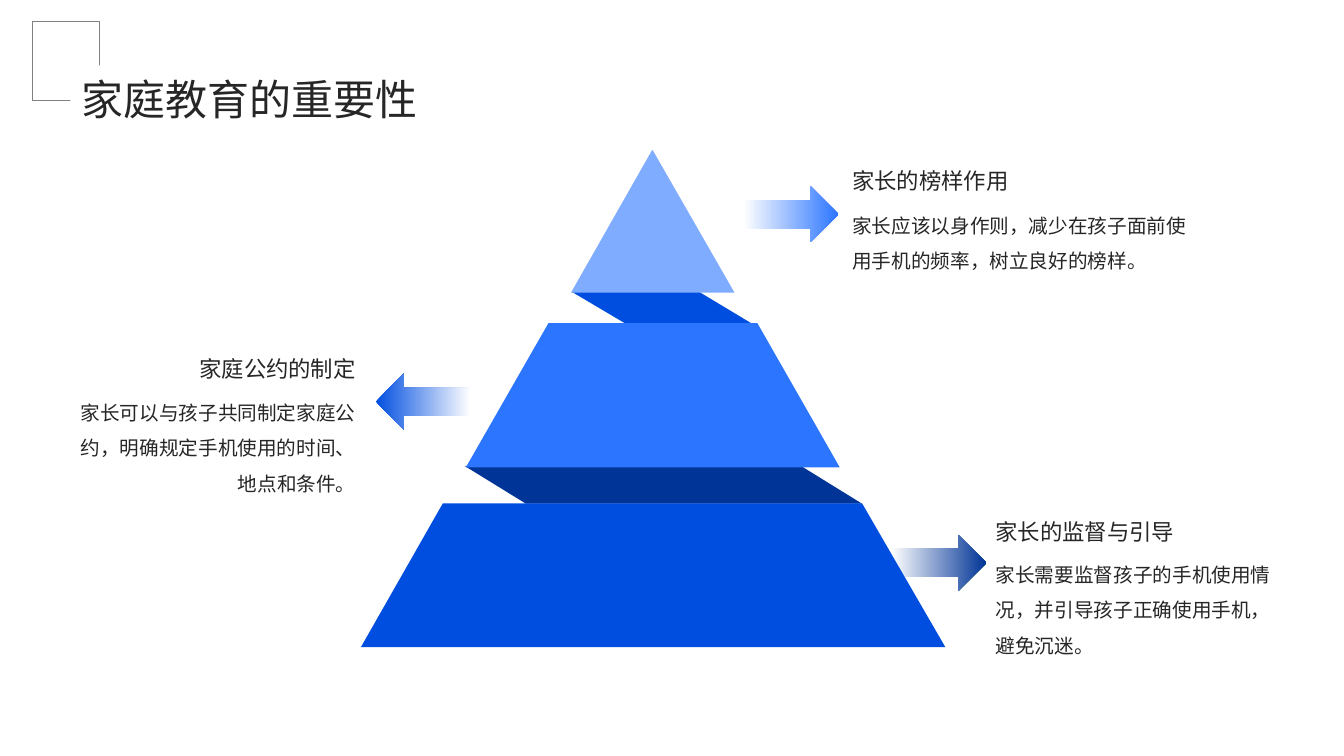
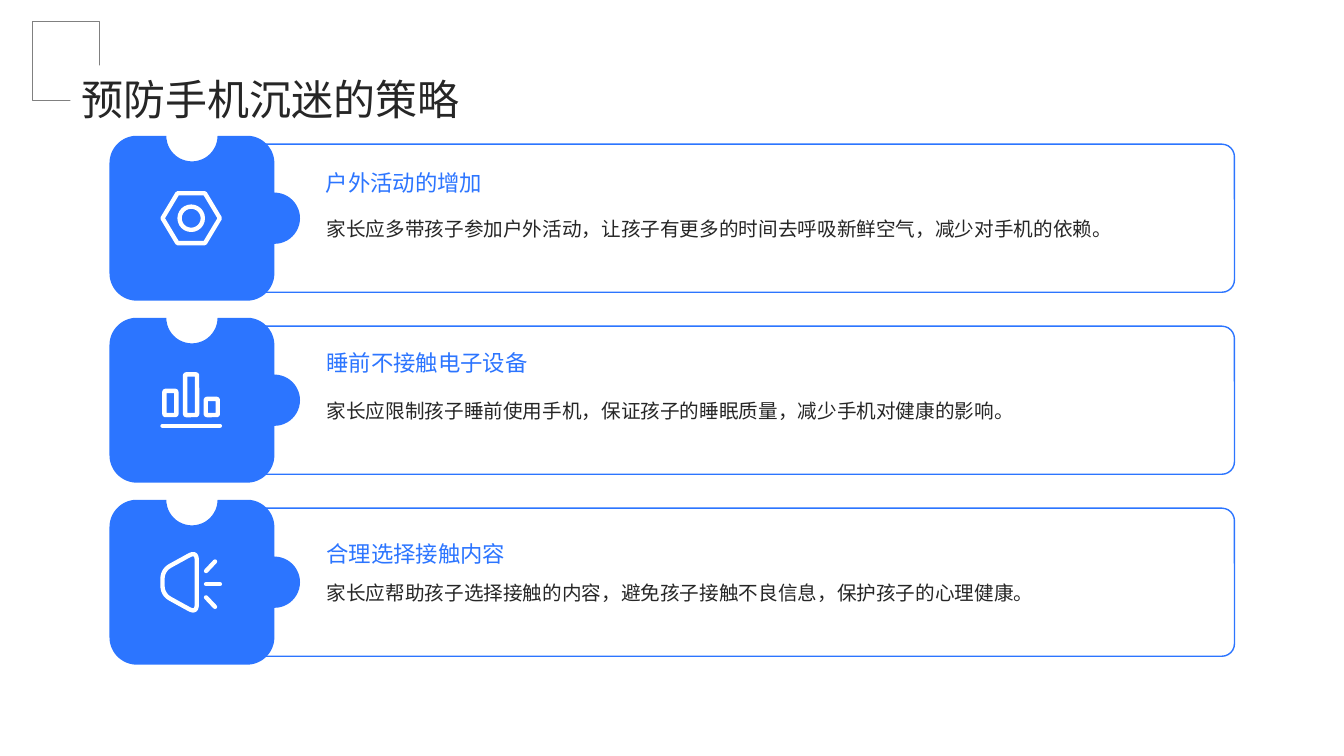
import math

from lxml import etree
from pptx import Presentation
from pptx.dml.color import RGBColor
from pptx.enum import shapes as kinds, text as txt
from pptx.oxml.ns import qn
from pptx.util import Pt

# Shared style
FONT = "Noto Sans CJK SC"
COLORS = {"white": "FFFFFF", "ink": "262626", "frame": "808080", "light": "80ACFF",
          "blue": "2C75FF", "deep": "004EE0", "navy": "003496"}
SHAPE = kinds.MSO_SHAPE
LEFT, RIGHT = txt.PP_ALIGN.LEFT, txt.PP_ALIGN.RIGHT
TOP, BOTTOM = txt.MSO_ANCHOR.TOP, txt.MSO_ANCHOR.BOTTOM
SLIDE_WIDTH, SLIDE_HEIGHT = 960, 540

# Slide 1 content: bands are colour, top, bottom, top edge (x, x), bottom edge (x, x)
PYRAMID_TITLE = "家庭教育的重要性"
BANDS = [
    ("navy", 332.8, 359.7, (331.9, 572.1), (375.5, 615.6)),
    ("deep", 208.4, 233.7, (408.4, 499.3), (451.2, 541.4)),
    ("deep", 359.6, 462.2, (316.3, 615.8), (257.8, 675.2)),
    ("blue", 230.8, 333.8, (391.8, 541), (332.8, 599.8)),
    ("light", 106.9, 209, (466, 466), (407.9, 524.6)),
]
NOTES = [
    {"head": "家长的榜样作用", "body": "家长应该以身作则，减少在孩子面前使用手机的频率，树立良好的榜样。",
     "at": (608.8, 117.1), "width": 244.1, "body_drop": 27, "align": LEFT,
     "arrow": (531.2, 132.9), "color": "blue"},
    {"head": "家庭公约的制定", "body": "家长可以与孩子共同制定家庭公约，明确规定手机使用的时间、地点和条件。",
     "at": (43.9, 251.1), "width": 210.2, "body_drop": 27, "align": RIGHT,
     "arrow": (268.4, 266.8), "color": "deep"},
    {"head": "家长的监督与引导", "body": "家长需要监督孩子的手机使用情况，并引导孩子正确使用手机，避免沉迷。",
     "at": (711.2, 367.7), "width": 205.9, "body_drop": 26, "align": LEFT,
     "arrow": (636.8, 381.9), "color": "navy"},
]
ARROW_SIZE = (67.7, 40.3)

# Slide 2 content: heading, its left and its drop below the tile's top, text, icon
CARDS_TITLE = "预防手机沉迷的策略"
CARDS = [
    ("户外活动的增加", 232.8, 14.1, "家长应多带孩子参加户外活动，让孩子有更多的时间去呼吸新鲜空气，减少对手机的依赖。", "nut"),
    ("睡前不接触电子设备", 233.3, 12.8, "家长应限制孩子睡前使用手机，保证孩子的睡眠质量，减少手机对健康的影响。", "bars"),
    ("合理选择接触内容", 233.3, 19.4, "家长应帮助孩子选择接触的内容，避免孩子接触不良信息，保护孩子的心理健康。", "speaker"),
]
TILE_LEFT, TILE_TOP, TILE_SIDE, TILE_PITCH = 78.2, 97, 117.8, 130
TILE_CORNER, KNOB = 19.6, 18.3
PANEL_LEFT, PANEL_WIDTH, PANEL_INSET = 177.1, 704.7, 6
CARD_TEXT_LEFT, CARD_TEXT_WIDTH, CARD_BODY_DROP = 233.3, 628.6, 49.7

# Icons, in points from the icon's centre: boxes are preset, x, y, w, h, adjustment
ICONS = {
    "nut": {"boxes": [(SHAPE.HEXAGON, -20.5, -17.8, 41, 35.6, 0.3),
                      (SHAPE.OVAL, -8.3, -8.3, 16.6, 16.6, None)]},
    "bars": {"boxes": [(SHAPE.ROUNDED_RECTANGLE, -19.2 + 14.8 * i, top, 8.6, 10.6 - top, 0.1)
                       for i, top in enumerate((-6.7, -18.5, -1))],
             "strokes": [(-20.5, 18.2, 20.5, 18.2)]},
    "speaker": {"outline": [(4, -22.2), (4, 22.2), (-20.5, 8.7), (-20.5, -8.7)],
                "strokes": [(10.6, -8, 17, -14.8), (10.6, 1.4, 20.5, 1.4), (10.6, 10.8, 17, 17.6)]},
}
ICON_STROKE, ICON_CORNER = 3.1, 6.5


def rgb(name):
    return RGBColor.from_string(COLORS[name])


def paint(shape, fill=None, line=None, width=1):
    """Give a shape a plain fill and line, without a shadow."""
    shape.shadow.inherit = False
    if fill:
        shape.fill.solid()
        shape.fill.fore_color.rgb = rgb(fill)
    else:
        shape.fill.background()
    if line:
        shape.line.color.rgb = rgb(line)
        shape.line.width = Pt(width)
    else:
        shape.line.fill.background()
    return shape


def add_box(slide, preset, x, y, w, h, adjustment=None):
    box = slide.shapes.add_shape(preset, Pt(x), Pt(y), Pt(w), Pt(h))
    if adjustment is not None:
        box.adjustments[0] = adjustment
    return box


def add_outline(slide, points):
    corners = [(Pt(x), Pt(y)) for x, y in points]
    builder = slide.shapes.build_freeform(*corners[0])
    builder.add_line_segments(corners[1:], close=True)
    return builder.convert_to_shape()


def add_label(slide, words, x, y, w, h, size, spacing, color="ink", align=LEFT, anchor=TOP):
    frame = slide.shapes.add_textbox(Pt(x), Pt(y), Pt(w), Pt(h)).text_frame
    frame.word_wrap = True
    frame.vertical_anchor = anchor
    frame.margin_left = frame.margin_right = frame.margin_top = frame.margin_bottom = 0
    frame.text = words
    paragraph = frame.paragraphs[0]
    paragraph.alignment = align
    paragraph.line_spacing = spacing
    font = paragraph.runs[0].font
    font.size, font.name = Pt(size), FONT
    font.color.rgb = rgb(color)
    # East Asian glyphs take their own typeface entry
    etree.SubElement(font._element, qn("a:ea")).set("typeface", FONT)


def add_titled_slide(deck, title):
    """Blank slide with the backdrop, corner frame and title; returned for its content."""
    slide = deck.slides.add_slide(deck.slide_layouts[6])
    paint(add_box(slide, SHAPE.RECTANGLE, 0, 0, SLIDE_WIDTH, SLIDE_HEIGHT), fill="white")
    paint(add_box(slide, SHAPE.RECTANGLE, 23, 15.1, 48.2, 56.5), line="frame", width=0.75)
    paint(add_box(slide, SHAPE.RECTANGLE, 50.2, 46.8, 43.9, 36), fill="white")
    add_label(slide, title, 58, 49, 799.2, 33.1, 30, 1.1)
    return slide


# Pyramid slide
def add_note(slide, note):
    x, y = note["at"]
    points_left = note["align"] == RIGHT
    preset = SHAPE.LEFT_ARROW if points_left else SHAPE.RIGHT_ARROW
    arrow = paint(add_box(slide, preset, *note["arrow"], *ARROW_SIZE))
    arrow.fill.gradient()
    arrow.fill.gradient_angle = 0
    fade = (note["color"], "white") if points_left else ("white", note["color"])
    for stop, color in zip(arrow.fill.gradient_stops, fade):
        stop.color.rgb = rgb(color)
    add_label(slide, note["head"], x, y, note["width"], 21.6, 16, 1.3,
              align=note["align"], anchor=BOTTOM)
    add_label(slide, note["body"], x, y + note["body_drop"], note["width"], 89.3, 14, 1.5,
              align=note["align"])


def build_pyramid(deck):
    slide = add_titled_slide(deck, PYRAMID_TITLE)
    for note in NOTES:
        add_note(slide, note)
    for color, top, bottom, (a, b), (c, d) in BANDS:
        paint(add_outline(slide, [(a, top), (b, top), (d, bottom), (c, bottom)]), fill=color)


# Card slide
def arc(cx, cy, radius, start, end, steps=24):
    angles = [math.radians(start + (end - start) * i / steps) for i in range(steps + 1)]
    return [(cx + radius * math.cos(a), cy + radius * math.sin(a)) for a in angles]


def puzzle_points(x, y):
    """Rounded square with a notch on top and a knob on the right."""
    half, right, bottom, r = TILE_SIDE / 2, x + TILE_SIDE, y + TILE_SIDE, TILE_CORNER
    return (arc(x + r, y + r, r, 180, 270) + arc(x + half, y, KNOB, 180, 0)
            + arc(right - r, y + r, r, -90, 0) + arc(right, y + half, KNOB, -90, 90)
            + arc(right - r, bottom - r, r, 0, 90) + arc(x + r, bottom - r, r, 90, 180))


def round_corners(points, cut, steps=10):
    """Replace every corner by a quadratic curve that starts cut points before it."""
    rounded = []
    for i, corner in enumerate(points):
        ends = []
        for other in (points[i - 1], points[(i + 1) % len(points)]):
            share = cut / math.dist(corner, other)
            ends.append([c + (o - c) * share for c, o in zip(corner, other)])
        for t in (step / steps for step in range(steps + 1)):
            rounded.append(tuple((1 - t) ** 2 * a + 2 * t * (1 - t) * c + t * t * b
                                 for a, c, b in zip(ends[0], corner, ends[1])))
    return rounded


def add_icon(slide, icon, cx, cy):
    parts = [paint(add_box(slide, preset, cx + x, cy + y, w, h, adjustment))
             for preset, x, y, w, h, adjustment in icon.get("boxes", [])]
    if "outline" in icon:
        points = round_corners(icon["outline"], ICON_CORNER)
        parts.append(paint(add_outline(slide, [(cx + x, cy + y) for x, y in points])))
    for x1, y1, x2, y2 in icon.get("strokes", []):
        parts.append(slide.shapes.add_connector(
            kinds.MSO_CONNECTOR.STRAIGHT, Pt(cx + x1), Pt(cy + y1), Pt(cx + x2), Pt(cy + y2)))
    for part in parts:
        part.line.color.rgb = rgb("white")
        part.line.width = Pt(ICON_STROKE)
        properties = part._element.spPr
        line = properties.find(qn("a:ln"))
        line.set("cap", "rnd")
        etree.SubElement(line, qn("a:round"))
        if properties.find(qn("a:effectLst")) is None:
            etree.SubElement(properties, qn("a:effectLst"))


def build_cards(deck):
    slide = add_titled_slide(deck, CARDS_TITLE)
    for i, (head, head_left, head_drop, body, icon) in enumerate(CARDS):
        top = TILE_TOP + i * TILE_PITCH
        paint(add_box(slide, SHAPE.ROUNDED_RECTANGLE, PANEL_LEFT, top + PANEL_INSET,
                      PANEL_WIDTH, TILE_SIDE - 2 * PANEL_INSET, 0.085), fill="white", line="blue")
        paint(add_outline(slide, puzzle_points(TILE_LEFT, top)), fill="blue")
        add_icon(slide, ICONS[icon], TILE_LEFT + TILE_SIDE / 2 - 0.5, top + TILE_SIDE / 2)
        add_label(slide, head, head_left, top + head_drop, CARD_TEXT_WIDTH, 30.2, 16, 1.5, "blue")
        add_label(slide, body, CARD_TEXT_LEFT, top + CARD_BODY_DROP, CARD_TEXT_WIDTH, 52.6, 14, 1.5)


def main():
    deck = Presentation()
    deck.slide_width, deck.slide_height = Pt(SLIDE_WIDTH), Pt(SLIDE_HEIGHT)
    build_pyramid(deck)
    build_cards(deck)
    deck.save("out.pptx")


if __name__ == "__main__":
    main()
